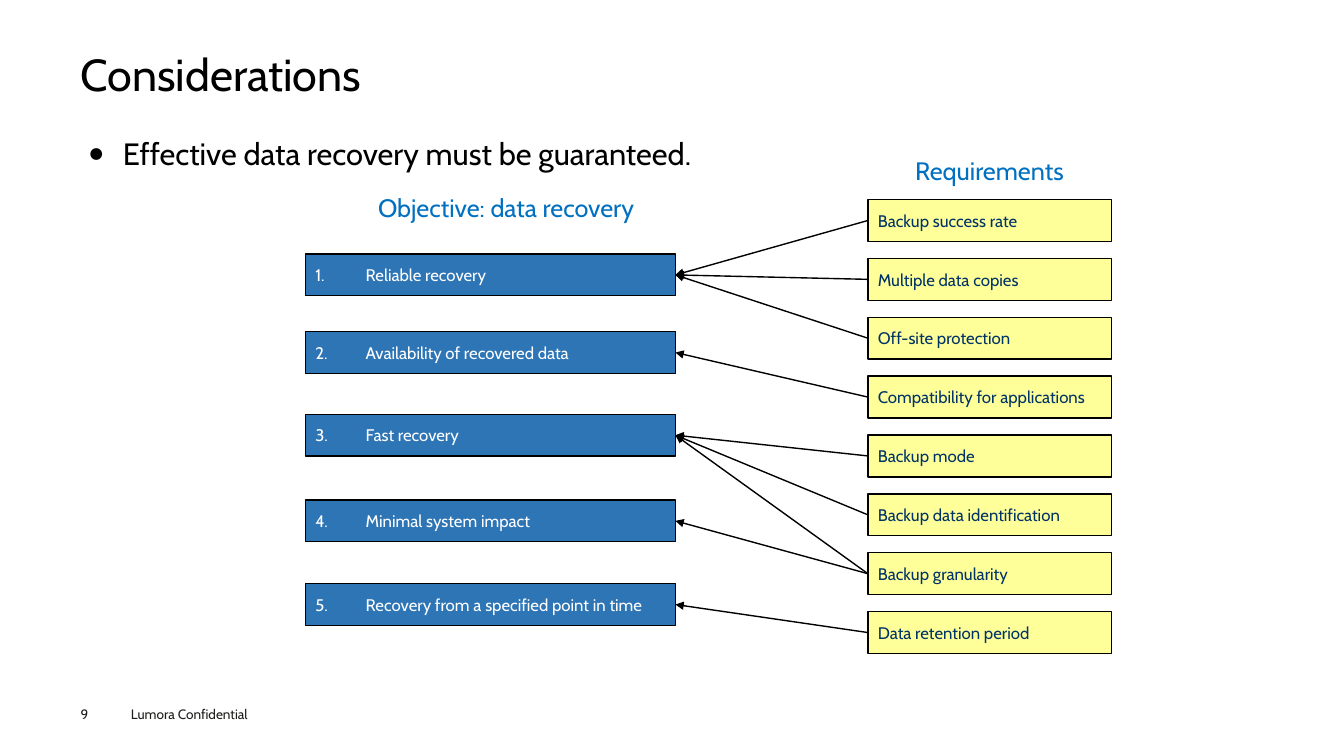
"""Build the data recovery considerations slide."""
from dataclasses import dataclass

from lxml import etree
from pptx import Presentation, util as u
from pptx.dml.color import RGBColor
from pptx.enum import shapes, text
from pptx.oxml import ns


@dataclass(frozen=True)
class Theme:
    """Colours, font and type sizes of the slide."""
    font: str = "Cabin"
    ink: str = "000000"
    footer: str = "1D1D1B"
    heading: str = "0070C0"
    objective: str = "2E75B6"
    on_objective: str = "FFFFFF"
    requirement: str = "FFFF99"
    on_requirement: str = "003366"
    title_pt: float = 32
    body_pt: float = 22
    heading_pt: float = 18
    box_pt: float = 12
    footer_pt: float = 9.7
    line_pt: float = 1


T = Theme()
CELL = u.Inches(0.1)
COLS, ROWS = 133.33, 75
ALIGN = text.PP_ALIGN

OBJECTIVES = [
    ("Reliable recovery", 25.2),
    ("Availability of recovered data", 32.9),
    ("Fast recovery", 41.1),
    ("Minimal system impact", 49.6),
    ("Recovery from a specified point in time", 57.9),
]
REQUIREMENTS = [
    ("Backup success rate", [1]),
    ("Multiple data copies", [1]),
    ("Off-site protection", [1]),
    ("Compatibility for applications", [2]),
    ("Backup mode", [3]),
    ("Backup data identification", [3]),
    ("Backup granularity", [3, 4]),
    ("Data retention period", [5]),
]
OBJECTIVE_COL, OBJECTIVE_COLS = 30.3, 36.7
REQUIREMENT_COL, REQUIREMENT_COLS = 86.1, 24.2
REQUIREMENT_ROW, REQUIREMENT_STEP = 19.8, 5.84
BOX_ROWS = 4.15


def grid(*cells):
    """Turn counts of grid cells into lengths."""
    return [u.Emu(round(c * CELL)) for c in cells]


def rgb(value):
    """Return the colour of a hex string."""
    return RGBColor.from_string(value)


def add_mark(p, indent, *marks):
    """Give a paragraph a hanging indent and bullet elements."""
    pPr = p._p.get_or_add_pPr()
    pPr.set("marL", str(u.Inches(indent)))
    pPr.set("indent", str(-u.Inches(indent)))
    for tag, attrs in marks:
        etree.SubElement(pPr, ns.qn(tag), attrs)


def write(sp, words, size, color, align=ALIGN.LEFT, margins=None,
          anchor=text.MSO_ANCHOR.TOP):
    """Write one formatted paragraph into a shape and return it."""
    tf = sp.text_frame
    tf.text = words
    tf.word_wrap = True
    tf.auto_size = text.MSO_AUTO_SIZE.NONE
    tf.vertical_anchor = anchor
    if margins is not None:
        tf.margin_left = tf.margin_right = u.Inches(margins[0])
        tf.margin_top = tf.margin_bottom = u.Inches(margins[1])
    p = tf.paragraphs[0]
    p.alignment = align
    p.space_before = u.Pt(0)
    font = p.runs[0].font
    font.name, font.size, font.color.rgb = T.font, u.Pt(size), rgb(color)
    return p


def place(sp, *cells):
    """Move a placeholder to a grid area."""
    sp.left, sp.top, sp.width, sp.height = grid(*cells)


def add_label(s, cells, words, size, color, **style):
    """Add a text box on the grid."""
    write(s.shapes.add_textbox(*grid(*cells)), words, size, color, **style)


def add_box(s, cells, words, fill, color, number=None):
    """Add an outlined box, numbered on request."""
    sp = s.shapes.add_shape(shapes.MSO_SHAPE.RECTANGLE, *grid(*cells))
    sp.shadow.inherit = False
    sp.fill.solid()
    sp.fill.fore_color.rgb = rgb(fill)
    sp.line.color.rgb = rgb(T.ink)
    sp.line.width = u.Pt(T.line_pt)
    p = write(sp, words, T.box_pt, color, anchor=text.MSO_ANCHOR.MIDDLE)
    if number:
        add_mark(p, 0.5, ("a:buFont", {"typeface": T.font}),
                 ("a:buAutoNum", {"type": "arabicPeriod", "startAt": str(number)}))
    return sp


def add_arrow(s, requirement, objective):
    """Join a requirement to the objective it serves."""
    cxn = s.shapes.add_connector(shapes.MSO_CONNECTOR.STRAIGHT, 0, 0, 0, 0)
    cxn.begin_connect(requirement, 1)
    cxn.end_connect(objective, 3)
    cxn.line.color.rgb = rgb(T.ink)
    cxn.line.width = u.Pt(T.line_pt)
    etree.SubElement(cxn.line._get_or_add_ln(), ns.qn("a:tailEnd"), {"type": "triangle"})
    etree.SubElement(cxn._element.spPr, ns.qn("a:effectLst"))


def main():
    """Build and save the slide."""
    prs = Presentation()
    prs.slide_width, prs.slide_height = grid(COLS, ROWS)
    s = prs.slides.add_slide(prs.slide_layouts[1])

    title, body = s.placeholders
    place(title, 8, 4.9, 117.3, 5.4)
    p = write(title, "Considerations", T.title_pt, T.ink, margins=(0, 0),
              anchor=text.MSO_ANCHOR.MIDDLE)
    p.line_spacing = 0.9
    place(body, 8, 11.5, 117.3, 53.3)
    p = write(body, "Effective data recovery must be guaranteed.", T.body_pt, T.ink,
              align=ALIGN.JUSTIFY, margins=(0.09, 0.04))
    add_mark(p, 0.33, ("a:buSzPct", {"val": "50000"}),
             ("a:buFont", {"typeface": T.font}), ("a:buChar", {"char": "●"}))
    p.line_spacing = 1.4

    add_label(s, (32.3, 18.6, 31.6, 4), "Objective: data recovery",
              T.heading_pt, T.heading, align=ALIGN.RIGHT)
    add_label(s, (86.9, 14.9, 22.5, 4), "Requirements",
              T.heading_pt, T.heading, align=ALIGN.CENTER)
    add_label(s, (8, 70, 5.5, 1.6), "9", T.footer_pt, T.footer, margins=(0, 0))
    add_label(s, (12, 69.5, 16, 2.7), "Lumora Confidential", T.footer_pt, T.footer)

    objectives = {
        n: add_box(s, (OBJECTIVE_COL, row, OBJECTIVE_COLS, BOX_ROWS), words,
                   T.objective, T.on_objective, n)
        for n, (words, row) in enumerate(OBJECTIVES, 1)
    }
    for i, (words, served) in enumerate(REQUIREMENTS):
        row = REQUIREMENT_ROW + i * REQUIREMENT_STEP
        sp = add_box(s, (REQUIREMENT_COL, row, REQUIREMENT_COLS, BOX_ROWS), words,
                     T.requirement, T.on_requirement)
        for n in served:
            add_arrow(s, sp, objectives[n])

    prs.save("out.pptx")


if __name__ == "__main__":
    main()
